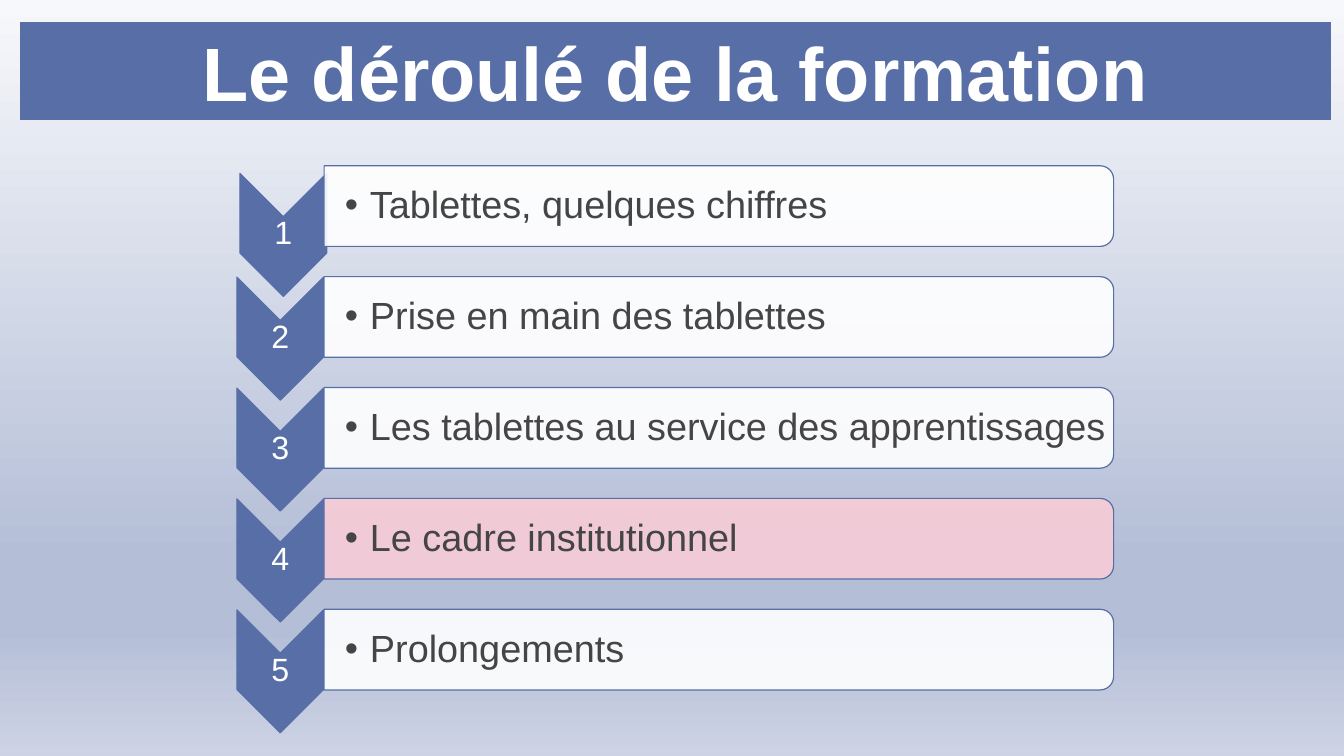
from copy import deepcopy
from dataclasses import dataclass

from pptx import Presentation
from pptx import util as u
from pptx.dml.color import RGBColor
from pptx.enum import shapes, text
from pptx.oxml import ns, xmlchemy

HUES = {"blue": "586EA6", "white": "FFFFFF", "pink": "F7CCD6", "gray": "454545"}
SKY = [(0, "F7F8FB"), (74, "B4BED7"), (83, "B4BED7"), (100, "CDD3E4")]
STEP = 1.1
KIND = shapes.MSO_SHAPE
LEFT, MID = text.PP_ALIGN.LEFT, text.PP_ALIGN.CENTER


@dataclass
class Stage:
    name: str
    fill: str = "white"
    dx: float = 0
    dy: float = 0


STAGES = [
    Stage("Tablettes, quelques chiffres", dx=0.03, dy=0.07),
    Stage("Prise en main des tablettes"),
    Stage("Les tablettes au service des apprentissages"),
    Stage("Le cadre institutionnel", fill="pink"),
    Stage("Prolongements"),
]


def hue(name: str) -> RGBColor:
    return RGBColor.from_string(HUES[name])


def add_sub(node, tag: str, **attrs: str) -> None:
    sub = xmlchemy.OxmlElement(tag)
    for key, val in attrs.items():
        sub.set(key, val)
    node.append(sub)


def paint_sky(slide) -> None:
    """Fill the background with the vertical gradient."""
    fill = slide.background.fill
    fill.gradient()
    fill.gradient_angle = 270
    stops = slide.element.find(".//" + ns.qn("a:gsLst"))
    for _ in SKY[2:]:
        stops.append(deepcopy(stops[0]))
    for stop, (pos, tint) in zip(fill.gradient_stops, SKY):
        stop.position = pos / 100
        stop.color.rgb = RGBColor.from_string(tint)


def write(shape, words: str, size: float, tint: str, align, bold: bool = False, **frame):
    """Set one formatted paragraph and return it."""
    body = shape.text_frame
    base = {"word_wrap": True, "auto_size": text.MSO_AUTO_SIZE.NONE,
            "vertical_anchor": text.MSO_ANCHOR.MIDDLE}
    for key, val in {**base, **frame}.items():
        setattr(body, key, val)
    para = body.paragraphs[0]
    para.alignment = align
    para.line_spacing = 0.9
    run = para.add_run()
    run.text = words
    for key, val in {"name": "Arial", "size": u.Pt(size), "bold": bold}.items():
        setattr(run.font, key, val)
    run.font.color.rgb = hue(tint)
    return para


def add_turned(slide, kind, box: tuple, tint: str):
    """Add a shape turned clockwise by a quarter."""
    shape = slide.shapes.add_shape(kind, *map(u.Inches, box))
    shape.rotation = 90
    shape.shadow.inherit = False
    shape.fill.solid()
    shape.fill.fore_color.rgb = hue(tint)
    shape.line.color.rgb = hue("blue")
    shape.line.width = u.Pt(0.85)
    return shape


def add_label(slide, box: tuple, words: str, size: float, tint: str, align, inset: float):
    label = slide.shapes.add_textbox(*map(u.Inches, box))
    pads = {f"margin_{side}": u.Inches(0.02) for side in ("right", "top", "bottom")}
    return write(label, words, size, tint, align, margin_left=u.Inches(inset), **pads)


def add_stage(slide, num: int, stage: Stage) -> None:
    down = STEP * (num - 1)
    x, y = 2.17 + stage.dx, 1.83 + down + stage.dy
    add_turned(slide, KIND.CHEVRON, (x, y, 1.22, 0.86), "blue")
    add_label(slide, (x + 0.18, y + 0.24, 0.86, 0.37), str(num), 23, "white", MID, 0.02)

    bar = add_turned(slide, KIND.ROUND_2_SAME_RECTANGLE,
                     (6.73, down - 1.87, 0.8, 7.83), stage.fill)
    add_sub(bar.element.spPr.find(".//" + ns.qn("a:srgbClr")), "a:alpha", val="90000")
    para = add_label(slide, (3.21, 1.69 + down, 7.8, 0.72), stage.name, 27, "gray", LEFT, 0.21)
    para.level = 1
    props = para._p.get_or_add_pPr()
    props.set("marL", str(u.Inches(0.25)))
    props.set("indent", str(u.Inches(-0.25)))
    add_sub(props, "a:buFont", typeface="Arial")
    add_sub(props, "a:buChar", char="•")


def add_title(slide) -> None:
    title = slide.shapes.title
    box = {"left": 0.2, "top": 0.22, "width": 13, "height": 0.97}
    for key, val in box.items():
        setattr(title, key, u.Inches(val))
    title.fill.solid()
    title.fill.fore_color.rgb = hue("blue")
    para = write(title, "Le déroulé de la formation", 54, "white", MID, bold=True)
    para.line_spacing = 1.0


def main() -> None:
    deck = Presentation()
    deck.slide_width, deck.slide_height = u.Inches(13.33), u.Inches(7.5)
    slide = deck.slides.add_slide(deck.slide_layouts[5])
    paint_sky(slide)
    add_title(slide)
    for num, stage in enumerate(STAGES, 1):
        add_stage(slide, num, stage)
    deck.save("out.pptx")


if __name__ == "__main__":
    main()
